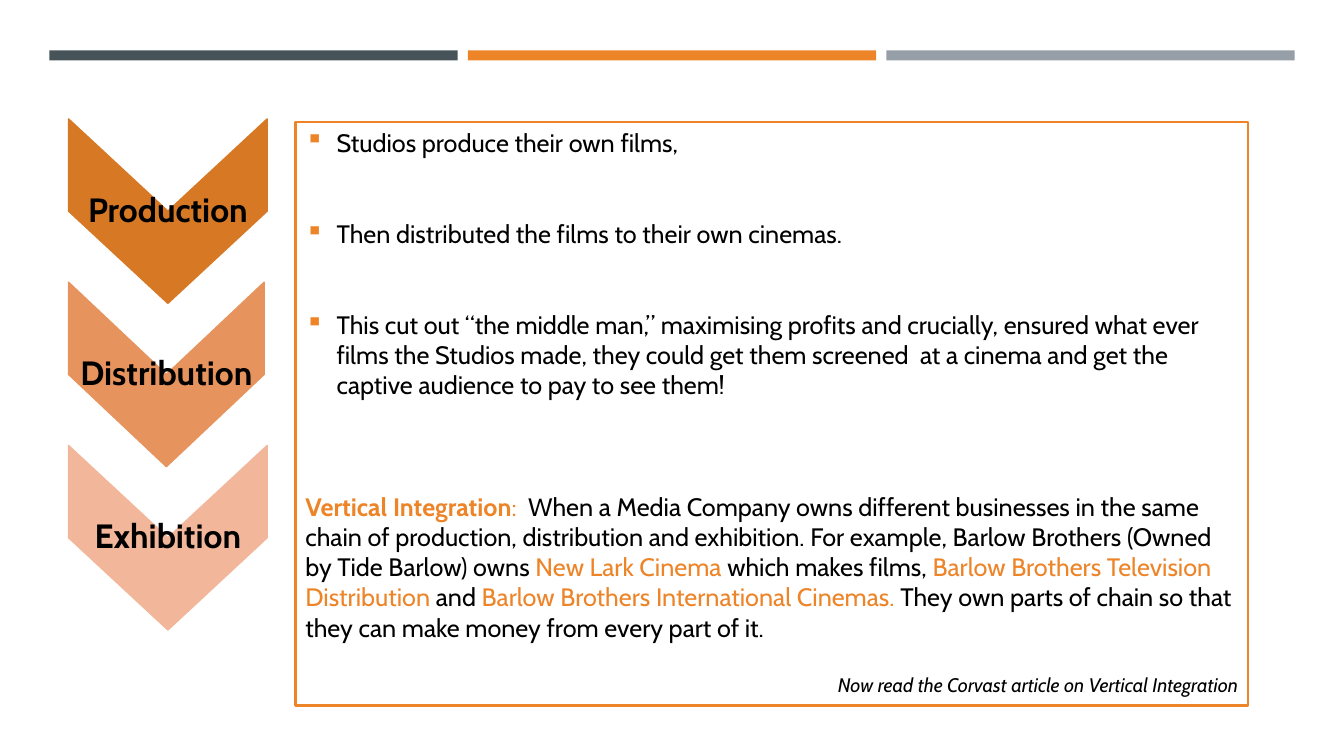
"""Build a slide on vertical integration in the film industry."""
from dataclasses import dataclass
from typing import Any

from lxml.etree import SubElement
from pptx import Presentation
from pptx.dml.color import RGBColor
from pptx.enum.shapes import MSO_SHAPE as Preset
from pptx.enum.text import MSO_ANCHOR as Anchor, PP_ALIGN as Align
from pptx.oxml.ns import qn
from pptx.util import Inches, Pt

SLATE = RGBColor(0x46, 0x53, 0x59)
ORANGE = RGBColor(0xED, 0x84, 0x28)
GREY = RGBColor(0x96, 0x9F, 0xA7)
DEEP_ORANGE = RGBColor(0xD7, 0x78, 0x24)
SOFT_ORANGE = RGBColor(0xE7, 0x93, 0x5D)
PEACH = RGBColor(0xF2, 0xB6, 0x9A)
BLACK = RGBColor(0, 0, 0)
WHITE = RGBColor(0xFF, 0xFF, 0xFF)

FONT = "Cabin"
BAR_PITCH = 4.15
STAGE_PITCH = 1.62
STAGE_HEIGHT = 1.83


@dataclass(frozen=True)
class Stage:
    name: str
    color: RGBColor
    width: float = 1.97


@dataclass(frozen=True)
class Span:
    text: str
    color: RGBColor = BLACK
    size: int = 18
    bold: bool = False
    italic: bool = False


@dataclass(frozen=True)
class Para:
    spans: tuple[Span, ...]
    before: float = 0
    bullet: bool = False
    align: Align = Align.LEFT


BAR_COLORS = (SLATE, ORANGE, GREY)
STAGES = (
    Stage("Production", DEEP_ORANGE),
    Stage("Distribution", SOFT_ORANGE, 1.94),
    Stage("Exhibition", PEACH),
)
NOTES = (
    Para((Span("Studios produce their own films,"),), bullet=True),
    Para((Span("Then distributed the films to their own cinemas."),), 43.5, True),
    Para((Span("This cut out “the middle man,” maximising profits and crucially, "
               "ensured what ever films the Studios made, they could get them screened  "
               "at a cinema and get the captive audience to pay to see them!"),), 43.5, True),
    Para((
        Span("Vertical Integration", ORANGE, bold=True),
        Span(":  ", ORANGE),
        Span("When a Media Company owns different businesses in the same chain of "
             "production, distribution and exhibition. For example, Barlow Brothers "
             "(Owned by Tide Barlow) owns "),
        Span("New Lark Cinema ", ORANGE),
        Span("which makes films, "),
        Span("Barlow Brothers Television Distribution", ORANGE),
        Span(" and "),
        Span("Barlow Brothers International Cinemas. ", ORANGE),
        Span("They own parts of chain so that they can make money from every part of it."),
    ), 65),
    Para((Span("Now read the Corvast article on Vertical Integration", size=14, italic=True),),
         21.75, align=Align.RIGHT),
)


def apply(target: Any, formats: dict[str, Any]) -> None:
    """Set every attribute named in the formats."""
    for name, value in formats.items():
        setattr(target, name, value)


def add_block(page: Any, preset: Preset, left: float, top: float, width: float,
              height: float, fill: RGBColor, line: RGBColor | None = None,
              weight: float = 1) -> Any:
    """Add a flat filled shape with an optional outline."""
    shape = page.shapes.add_shape(
        preset, Inches(left), Inches(top), Inches(width), Inches(height))
    shape.shadow.inherit = False
    shape.fill.solid()
    shape.fill.fore_color.rgb = fill
    if line is None:
        shape.line.fill.background()
    else:
        shape.line.color.rgb = line
        shape.line.width = Pt(weight)
    return shape


def add_span(paragraph: Any, span: Span) -> None:
    """Append one formatted run."""
    run = paragraph.add_run()
    run.text = span.text
    apply(run.font, {"name": FONT, "size": Pt(span.size),
                     "bold": span.bold, "italic": span.italic})
    run.font.color.rgb = span.color


def add_bullet(paragraph: Any) -> None:
    """Give the paragraph a hanging square orange bullet."""
    properties = paragraph._p.get_or_add_pPr()
    properties.set("marL", str(Inches(0.31)))
    properties.set("indent", str(Inches(-0.31)))
    color = SubElement(properties, qn("a:buClr"))
    SubElement(color, qn("a:srgbClr"), val=str(ORANGE))
    SubElement(properties, qn("a:buChar"), char="▪")


def add_stage(page: Any, stage: Stage, top: float) -> None:
    """Draw a downward chevron with its label."""
    left = 0.68
    chevron = add_block(
        page, Preset.CHEVRON, left + (stage.width - STAGE_HEIGHT) / 2,
        top - (stage.width - STAGE_HEIGHT) / 2, STAGE_HEIGHT, stage.width,
        stage.color, stage.color)
    chevron.rotation = 90
    box = page.shapes.add_textbox(
        Inches(left), Inches(top), Inches(stage.width), Inches(STAGE_HEIGHT))
    inset = Inches(0.02)
    apply(box.text_frame, {"word_wrap": True, "vertical_anchor": Anchor.MIDDLE,
                           "margin_left": inset, "margin_right": inset,
                           "margin_top": inset, "margin_bottom": inset})
    paragraph = box.text_frame.paragraphs[0]
    apply(paragraph, {"alignment": Align.CENTER, "line_spacing": 0.9})
    add_span(paragraph, Span(stage.name, size=24, bold=True))


def add_notes(page: Any, paras: tuple[Para, ...]) -> None:
    """Draw the outlined panel of explanations."""
    panel = add_block(page, Preset.RECTANGLE, 2.93, 1.21, 9.45, 5.79, WHITE, ORANGE, 1.75)
    frame = panel.text_frame
    apply(frame, {"word_wrap": True, "vertical_anchor": Anchor.TOP})
    for index, para in enumerate(paras):
        paragraph = frame.add_paragraph() if index else frame.paragraphs[0]
        apply(paragraph, {"alignment": para.align, "space_before": Pt(para.before)})
        if para.bullet:
            add_bullet(paragraph)
        for span in para.spans:
            add_span(paragraph, span)


def main() -> None:
    """Build and save the deck."""
    deck = Presentation()
    apply(deck, {"slide_width": Inches(13.33), "slide_height": Inches(7.5)})
    page = deck.slides.add_slide(deck.slide_layouts[6])
    for index, color in enumerate(BAR_COLORS):
        add_block(page, Preset.RECTANGLE, 0.49 + index * BAR_PITCH, 0.5, 4.05, 0.1, color)
    for index, stage in enumerate(STAGES):
        add_stage(page, stage, 1.18 + index * STAGE_PITCH)
    add_notes(page, NOTES)
    deck.save("out.pptx")


if __name__ == "__main__":
    main()
